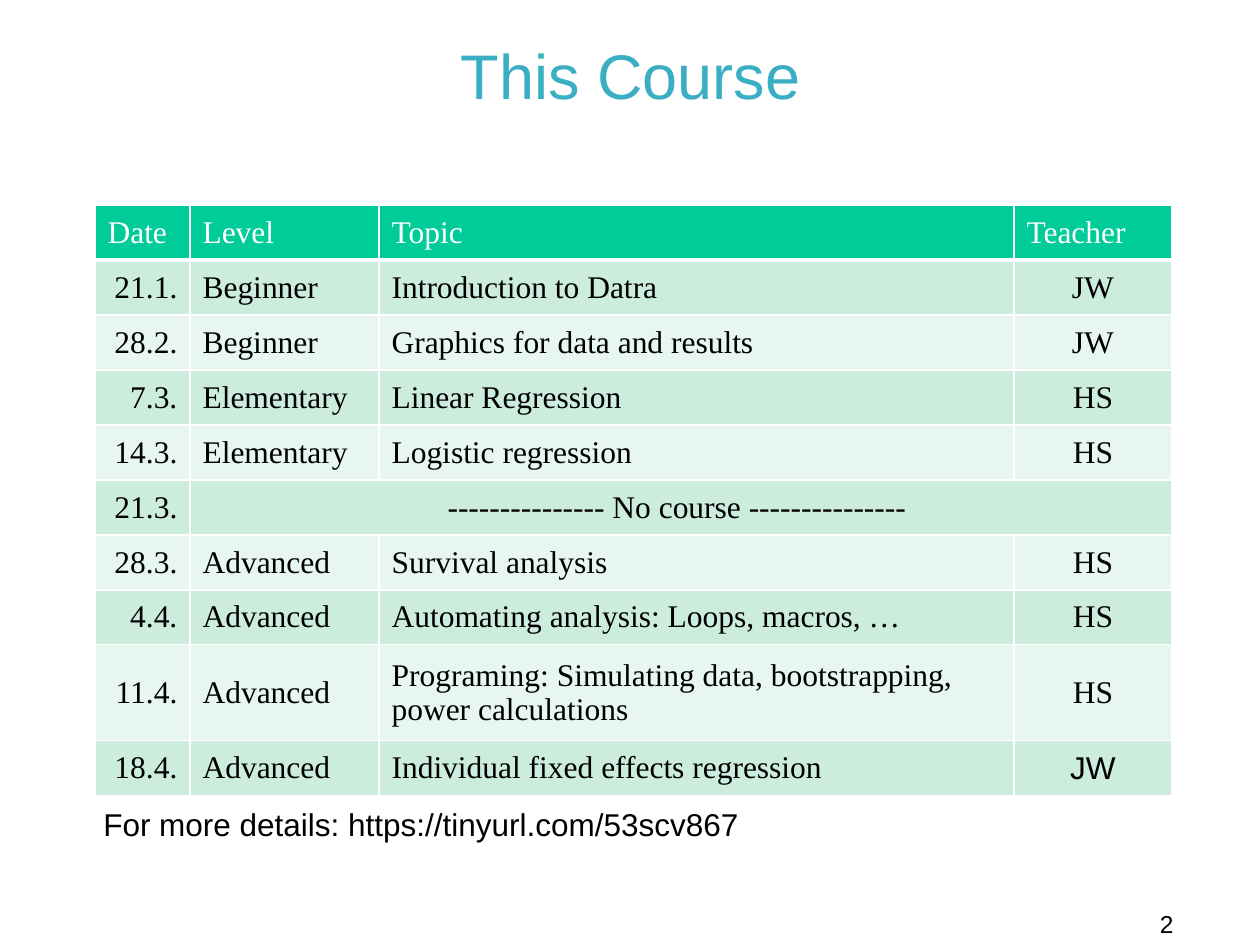
from lxml import etree
from pptx import Presentation, util as u
from pptx.dml.color import RGBColor
from pptx.enum import shapes, text
from pptx.oxml.ns import qn

WHITE = RGBColor(0xFF, 0xFF, 0xFF)
BLACK = RGBColor(0, 0, 0)
TEAL = RGBColor(0x3A, 0xAF, 0xC3)
GREEN = RGBColor(0x00, 0xCC, 0x99)
BANDS = RGBColor(0xCC, 0xEC, 0xDE), RGBColor(0xE7, 0xF6, 0xEF)
SANS, SERIF = "Arial", "Times New Roman"
LEFT, CENTER, RIGHT = text.PP_ALIGN.LEFT, text.PP_ALIGN.CENTER, text.PP_ALIGN.RIGHT

TITLE = "This Course"
HEADER = ("Date", "Level", "Topic", "Teacher")
SESSIONS = [
    ("21.1.", "Beginner", "Introduction to Datra", "JW"),
    ("28.2.", "Beginner", "Graphics for data and results", "JW"),
    ("7.3.", "Elementary", "Linear Regression", "HS"),
    ("14.3.", "Elementary", "Logistic regression", "HS"),
    ("21.3.", "--------------- No course --------------- "),
    ("28.3.", "Advanced", "Survival analysis", "HS"),
    ("4.4.", "Advanced", "Automating analysis: Loops, macros, …", "HS"),
    ("11.4.", "Advanced",
     "Programing: Simulating data, bootstrapping, power calculations", "HS"),
    ("18.4.", "Advanced", "Individual fixed effects regression", "JW"),
]
DETAILS = "For more details: https://tinyurl.com/53scv867"
PAGE = "2"

COL_WIDTHS = (95, 189, 635, 158)
COL_ALIGN = (RIGHT, LEFT, LEFT, CENTER)
ROW_HEIGHT, TALL_ROW, TALL_HEIGHT = 55, 8, 96


def px(n):
    return u.Emu(round(n * 914400 / 126))


def write(tf, words, size, color, align=LEFT, font=SANS):
    p = tf.paragraphs[0]
    p.text = words
    p.alignment = align
    p.font.size, p.font.name = u.Pt(size), font
    p.font.color.rgb = color


def set_borders(cell, bottom):
    """White lines of 1 pt, with the bottom width given in points."""
    tc_pr = cell._tc.get_or_add_tcPr()
    sides = ("lnL", 1), ("lnR", 1), ("lnT", 1), ("lnB", bottom)
    for i, (side, width) in enumerate(sides):
        ln = etree.Element(qn(f"a:{side}"), w=str(u.Pt(width)))
        fill = etree.SubElement(ln, qn("a:solidFill"))
        etree.SubElement(fill, qn("a:srgbClr"), val=str(WHITE))
        tc_pr.insert(i, ln)


def add_schedule(s):
    rows = [HEADER, *SESSIONS]
    heights = [TALL_HEIGHT if i == TALL_ROW else ROW_HEIGHT for i in range(len(rows))]
    table = s.shapes.add_table(len(rows), len(HEADER), px(95), px(205),
                               px(sum(COL_WIDTHS)), px(sum(heights))).table
    for col, width in zip(table.columns, COL_WIDTHS):
        col.width = px(width)
    for i, (row, height) in enumerate(zip(rows, heights)):
        table.rows[i].height = px(height)
        is_header = i == 0
        is_break = len(row) < len(HEADER)
        if is_break:
            table.cell(i, 1).merge(table.cell(i, len(HEADER) - 1))
        for j in range(len(HEADER)):
            cell = table.cell(i, j)
            cell.fill.solid()
            cell.fill.fore_color.rgb = GREEN if is_header else BANDS[(i - 1) % 2]
            cell.vertical_anchor = text.MSO_ANCHOR.MIDDLE
            set_borders(cell, 3 if is_header else 1)
            if j < len(row):
                align = LEFT if is_header else CENTER if is_break and j else COL_ALIGN[j]
                last = i == len(rows) - 1 and j == len(HEADER) - 1
                write(cell.text_frame, row[j], 18, WHITE if is_header else BLACK,
                      align, SANS if last else SERIF)


def main():
    prs = Presentation()
    prs.slide_width, prs.slide_height = px(1260), px(945)
    s = prs.slides.add_slide(prs.slide_layouts[6])

    title = s.shapes.add_textbox(px(95), px(22), px(1071), px(104)).text_frame
    title.word_wrap = True
    title.vertical_anchor = text.MSO_ANCHOR.MIDDLE
    write(title, TITLE, 36, TEAL, CENTER)

    add_schedule(s)

    details = s.shapes.add_textbox(px(91), px(799), px(667), px(51)).text_frame
    details.word_wrap = False
    details.auto_size = text.MSO_AUTO_SIZE.SHAPE_TO_FIT_TEXT
    write(details, DETAILS, 18, BLACK)

    page = s.shapes.add_shape(shapes.MSO_SHAPE.RECTANGLE,
                              px(1102), px(903), px(84), px(42))
    page.shadow.inherit = False
    page.fill.solid()
    page.fill.fore_color.rgb = WHITE
    page.line.fill.background()
    page.text_frame.vertical_anchor = text.MSO_ANCHOR.TOP
    write(page.text_frame, PAGE, 14, BLACK, RIGHT)

    prs.save("out.pptx")


if __name__ == "__main__":
    main()
